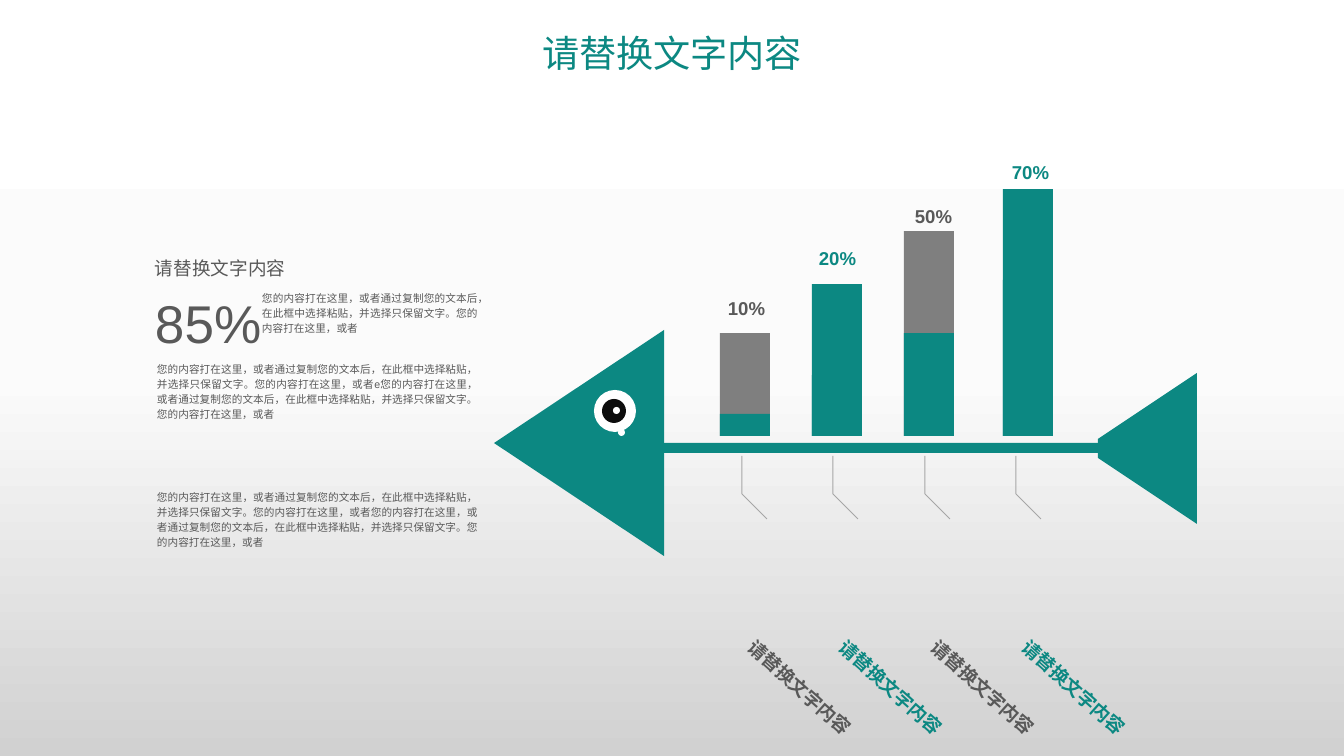
"""Fishbone slide with percentage bars, slanted labels and a text column."""
from lxml.etree import SubElement
from pptx import Presentation
from pptx.dml.color import RGBColor
from pptx.enum.shapes import MSO_SHAPE
from pptx.enum.text import MSO_ANCHOR, PP_ALIGN
from pptx.oxml.ns import qn
from pptx.util import Pt

PX = 9565
TEAL = RGBColor(0x0C, 0x88, 0x82)
GREY = RGBColor(0x7F, 0x7F, 0x7F)
DARK = RGBColor(0x59, 0x59, 0x59)
LINE = RGBColor(0xA6, 0xA6, 0xA6)
WHITE = RGBColor(0xFF, 0xFF, 0xFF)
BLACK = RGBColor(0x0D, 0x0D, 0x0D)
CJK_FONT = "Noto Sans CJK SC"
HEADING = "请替换文字内容"
START = "您的内容打在这里，或者"
BODY = "通过复制您的文本后，在此框中选择粘贴，并选择只保留文字。"

deck = Presentation()
deck.slide_width, deck.slide_height = 1344 * PX, 756 * PX
page = deck.slides.add_slide(deck.slide_layouts[6])


def add_block(kind, left, top, width, height, color):
    block = page.shapes.add_shape(kind, left * PX, top * PX, width * PX, height * PX)
    block.shadow.inherit = False
    block.fill.solid()
    block.fill.fore_color.rgb = color
    block.line.fill.background()
    return block


def add_text(text, left, top, width, height, size, color, align=PP_ALIGN.LEFT,
             bold=False, inset=True, wrap=True, font="Arial"):
    box = page.shapes.add_textbox(left * PX, top * PX, width * PX, height * PX)
    frame = box.text_frame
    frame.word_wrap = wrap
    if not inset:
        frame.margin_left = frame.margin_right = 0
        frame.margin_top = frame.margin_bottom = 0
    para = frame.paragraphs[0]
    para.alignment = align
    para.line_spacing = 1.2
    span = para.add_run()
    span.text = text
    span.font.size = Pt(size)
    span.font.bold = bold
    span.font.color.rgb = color
    span.font.name = font
    SubElement(span.font._element, qn("a:ea"), typeface=CJK_FONT)
    return box


backdrop = page.background.fill
backdrop.gradient()
backdrop.gradient_angle = 270
stops = page.element.find(".//" + qn("a:gsLst"))
stops.clear()
for position, shade in ((0, "FFFFFF"), (50000, "FBFBFB"), (100000, "D1D1D1")):
    stop = SubElement(stops, qn("a:gs"), pos=str(position))
    SubElement(stop, qn("a:srgbClr"), val=shade)

head = add_block(MSO_SHAPE.ISOSCELES_TRIANGLE, 466, 358, 226, 170, TEAL)
head.rotation = 270
for left, top, size, color in ((594, 390, 42, WHITE), (602, 399, 24, BLACK),
                               (618, 429, 7, WHITE), (613, 407, 7, WHITE)):
    add_block(MSO_SHAPE.OVAL, left, top, size, size, color)
add_block(MSO_SHAPE.RECTANGLE, 657, 443, 474, 10, TEAL)

outline = page.shapes.build_freeform(1197, 373, scale=PX)
outline.add_line_segments([(1197, 524), (1098, 458), (1098, 439)], close=True)
tail = outline.convert_to_shape()
tail.shadow.inherit = False
tail.fill.solid()
tail.fill.fore_color.rgb = TEAL
tail.line.fill.background()

BAR_BOTTOM = 436
bars = [
    ("10%", 720, 333, 414, 709, 288),
    ("20%", 812, 284, 375, 800, 238),
    ("50%", 904, 231, 333, 896, 196),
    ("70%", 1003, 189, 280, 993, 152),
]
for index, (value, left, top, inner_top, label_left, label_top) in enumerate(bars):
    bar_color, text_color = (TEAL, TEAL) if index % 2 else (GREY, DARK)
    for bar_top, color in ((top, bar_color), (inner_top, TEAL)):
        add_block(MSO_SHAPE.RECTANGLE, left, bar_top, 50, BAR_BOTTOM - bar_top, color)
    add_text(value, label_left, label_top, 75, 34, 14, text_color, PP_ALIGN.CENTER, bold=True)

    offset = round(index * 91.3)
    lead_left = 742 + offset
    path_builder = page.shapes.build_freeform(lead_left, 456, scale=PX)
    path_builder.add_line_segments([(lead_left, 494), (lead_left + 25, 519)], close=False)
    lead = path_builder.convert_to_shape()
    lead.shadow.inherit = False
    lead.fill.background()
    lead.line.color.rgb = LINE
    lead.line.width = Pt(0.75)

    label = add_text(HEADING, 721 + offset, 668, 162, 34, 14, text_color,
                     PP_ALIGN.CENTER, bold=True)
    label.rotation = 41.9

add_text(HEADING, 155, 252, 131, 25, 14, DARK, inset=False, wrap=False)
add_text("85%", 155, 278, 107, 70, 40, DARK, PP_ALIGN.JUSTIFY, inset=False, wrap=False)
paragraphs = [
    (START + BODY + START + "e" + START + BODY + START, 157, 360, 321, 62),
    (START + BODY + START, 262, 289, 216, 46),
    (START + BODY + START + START + BODY + START, 157, 488, 321, 62),
]
for text, left, top, width, height in paragraphs:
    add_text(text, left, top, width, height, 8, DARK, PP_ALIGN.JUSTIFY, inset=False)

title = add_text(HEADING, 507, 19, 330, 59, 28, TEAL, PP_ALIGN.CENTER, font=CJK_FONT)
title.text_frame.vertical_anchor = MSO_ANCHOR.MIDDLE

deck.save("out.pptx")
